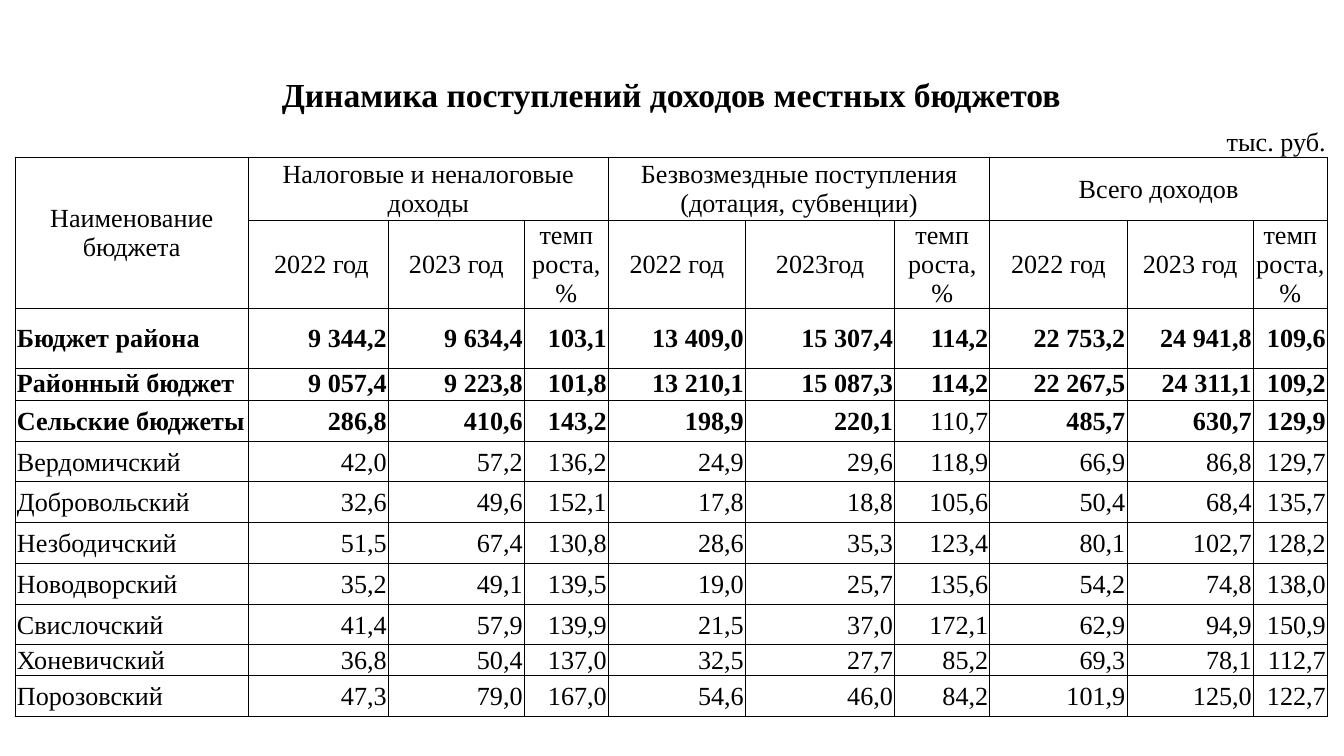
"""Build the slide with the table of local budget revenues."""
from dataclasses import dataclass
from itertools import accumulate

from lxml.etree import SubElement
from pptx import Presentation
from pptx.dml.color import RGBColor
from pptx.enum.text import MSO_ANCHOR, PP_ALIGN
from pptx.oxml.ns import qn
from pptx.util import Cm, Pt


@dataclass(frozen=True)
class Theme:
    font: str = "Times New Roman"
    ink: str = "000000"
    title_size: float = 18
    body_size: float = 14
    border: float = 0.5


THEME = Theme()
TITLE = "Динамика поступлений доходов местных бюджетов"
UNIT = "тыс. руб."
NAME_HEADING = "Наименование бюджета"
GROWTH = "темп\nроста, %"
GROUPS = [
    ("Налоговые и неналоговые доходы", 4),
    ("Безвозмездные поступления (дотация, субвенции)", 4),
    ("Всего доходов", 5),
]
SUBHEADINGS = [
    " 2022 год", "2023 год", GROWTH,
    "2022 год", "2023год", GROWTH,
    "2022 год", "2023 год", GROWTH,
]
BUDGETS = [
    ("Бюджет района", "9 344,2", "9 634,4", "103,1", "13 409,0", "15 307,4", "114,2", "22 753,2", "24 941,8", "109,6"),
    ("Районный бюджет", "9 057,4", "9 223,8", "101,8", "13 210,1", "15 087,3", "114,2", "22 267,5", "24 311,1", "109,2"),
    ("Сельские бюджеты", "286,8", "410,6", "143,2", "198,9", "220,1", "110,7", "485,7", "630,7", "129,9"),
    ("Вердомичский", "42,0", "57,2", "136,2", "24,9", "29,6", "118,9", "66,9", "86,8", "129,7"),
    ("Добровольский", "32,6", "49,6", "152,1", "17,8", "18,8", "105,6", "50,4", "68,4", "135,7"),
    ("Незбодичский", "51,5", "67,4", "130,8", "28,6", "35,3", "123,4", "80,1", "102,7", "128,2"),
    ("Новодворский", "35,2", "49,1", "139,5", "19,0", "25,7", "135,6", "54,2", "74,8", "138,0"),
    ("Свислочский", "41,4", "57,9", "139,9", "21,5", "37,0", "172,1", "62,9", "94,9", "150,9"),
    ("Хоневичский", "36,8", "50,4", "137,0", "32,5", "27,7", "85,2", "69,3", "78,1", "112,7"),
    ("Порозовский", "47,3", "79,0", "167,0", "54,6", "46,0", "84,2", "101,9", "125,0", "122,7"),
]
TOTAL_NAMES = {"Бюджет района", "Районный бюджет", "Сельские бюджеты"}
LIGHT_TOTAL = ("Сельские бюджеты", 6)
TOP_ALIGNED = "Районный бюджет"

WIDTHS = [4.4, 2.65, 1.88, 0.69, 1.59, 2.26, 0.33, 2.82, 1.8, 1.85, 0.74, 1.52, 0.87, 1.4]
HEIGHTS = [0.81, 0.81, 1.19, 1.19, 1.13, 0.61] + [0.77] * 6 + [0.54, 0.77]
FIELD_SPANS = [1, 1, 2, 1, 2, 1, 1, 2, 2, 1]
UNIT_ROW_SPANS = [1, 2, 3, 3, 1, 2, 2]
TITLE_ROW, UNIT_ROW, GROUP_ROW, YEAR_ROW, FIRST_BUDGET_ROW = range(5)


def starts(spans):
    return [0, *accumulate(spans)][:-1]


def write(cell, text, *, align=PP_ALIGN.CENTER, anchor=MSO_ANCHOR.MIDDLE,
          bold=False, size=THEME.body_size):
    cell.text = text
    cell.vertical_anchor = anchor
    for paragraph in cell.text_frame.paragraphs:
        paragraph.alignment = align
        for run in paragraph.runs:
            run.font.name = THEME.font
            run.font.size = Pt(size)
            run.font.bold = bold
            run.font.color.rgb = RGBColor.from_string(THEME.ink)


def rule(cell, sides):
    properties = cell._tc.get_or_add_tcPr()
    for side in "LRTB":
        line = SubElement(properties, qn(f"a:ln{side}"), w=str(Pt(THEME.border)))
        if side in sides:
            ink = SubElement(line, qn("a:solidFill"))
            SubElement(ink, qn("a:srgbClr"), val=THEME.ink)
        else:
            SubElement(line, qn("a:noFill"))


def prepare(revenues):
    for lengths, bands in ((WIDTHS, revenues.columns), (HEIGHTS, revenues.rows)):
        for length, band in zip(lengths, bands):
            if bands is revenues.columns:
                band.width = Cm(length)
            else:
                band.height = Cm(length)
    for row in range(len(HEIGHTS)):
        sides = {TITLE_ROW: "", UNIT_ROW: "B"}.get(row, "LRTB")
        for column in range(len(WIDTHS)):
            cell = revenues.cell(row, column)
            cell.margin_left = cell.margin_right = cell.margin_top = Cm(0.03)
            cell.margin_bottom = 0
            rule(cell, sides)
            cell.fill.background()


def span_row(revenues, row, spans, first=0):
    cells = []
    for start, span in zip(starts(spans), spans):
        cell = revenues.cell(row, first + start)
        if span > 1:
            cell.merge(revenues.cell(row, first + start + span - 1))
        cells.append(cell)
    return cells


def fill_headings(revenues):
    title_cell, = span_row(revenues, TITLE_ROW, [len(WIDTHS)])
    write(title_cell, TITLE, anchor=MSO_ANCHOR.BOTTOM, bold=True, size=THEME.title_size)
    unit_cell = span_row(revenues, UNIT_ROW, UNIT_ROW_SPANS)[-1]
    write(unit_cell, UNIT, align=PP_ALIGN.RIGHT, anchor=MSO_ANCHOR.BOTTOM)
    name_cell = revenues.cell(GROUP_ROW, 0)
    name_cell.merge(revenues.cell(YEAR_ROW, 0))
    write(name_cell, NAME_HEADING)
    group_cells = span_row(revenues, GROUP_ROW, [span for _, span in GROUPS], first=1)
    for cell, (group, _) in zip(group_cells, GROUPS):
        write(cell, group)
    for cell, heading in zip(span_row(revenues, YEAR_ROW, FIELD_SPANS[1:], first=1), SUBHEADINGS):
        write(cell, heading)


def fill_budgets(revenues):
    for row, budget in enumerate(BUDGETS, FIRST_BUDGET_ROW):
        name = budget[0]
        anchor = MSO_ANCHOR.TOP if name == TOP_ALIGNED else MSO_ANCHOR.MIDDLE
        for field, cell in enumerate(span_row(revenues, row, FIELD_SPANS)):
            write(cell, budget[field], anchor=anchor,
                  align=PP_ALIGN.RIGHT if field else PP_ALIGN.LEFT,
                  bold=name in TOTAL_NAMES and (name, field) != LIGHT_TOTAL)


def main():
    deck = Presentation()
    deck.slide_width, deck.slide_height = Cm(25.4), Cm(14.29)
    slide = deck.slides.add_slide(deck.slide_layouts[6])
    revenues = slide.shapes.add_table(
        len(HEIGHTS), len(WIDTHS), Cm(0.29), Cm(1.35), Cm(sum(WIDTHS)), Cm(sum(HEIGHTS))
    ).table
    revenues.first_row = revenues.horz_banding = False
    prepare(revenues)
    fill_headings(revenues)
    fill_budgets(revenues)
    deck.save("out.pptx")


if __name__ == "__main__":
    main()
